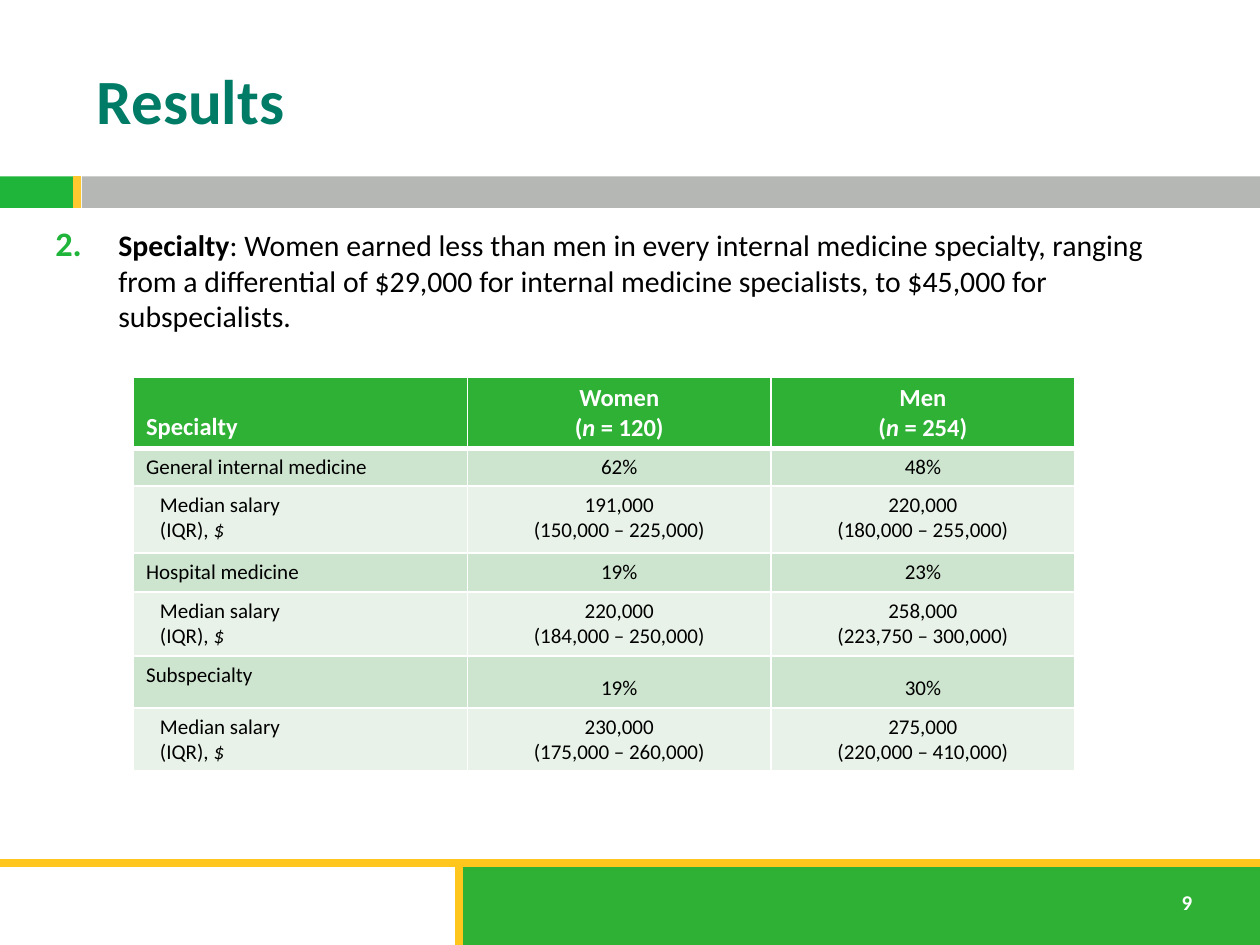
"""Build the results slide comparing salaries by specialty."""
from dataclasses import dataclass

from lxml import etree
from pptx import Presentation
from pptx import util as u
from pptx.dml.color import RGBColor
from pptx.enum import shapes, text
from pptx.oxml.ns import qn

WHITE, BLACK, GREEN, TEAL = "FFFFFF", "000000", "2EB135", "007C66"
BRIGHT, GREY, GOLD, AMBER = "1EB53A", "B5B7B4", "FFC61E", "FFC82E"
SHADE, TINT = "CDE4CE", "E8F2E8"
CENTER, LEFT = text.PP_ALIGN.CENTER, text.PP_ALIGN.LEFT
TOP, MIDDLE, BOTTOM = text.MSO_ANCHOR.TOP, text.MSO_ANCHOR.MIDDLE, text.MSO_ANCHOR.BOTTOM


@dataclass
class Bar:
    x: float
    y: float
    w: float
    h: float
    color: str


@dataclass
class Rule:
    x1: float
    y1: float
    x2: float
    y2: float
    color: str


@dataclass
class Specialty:
    name: str
    shares: tuple
    medians: tuple
    ranges: tuple
    heights: tuple


BARS = [
    Bar(0, 1.4, 0.58, 0.25, BRIGHT),
    Bar(0.65, 1.4, 9.35, 0.25, GREY),
    Bar(3.62, 6.84, 6.38, 0.66, GREEN),
]
RULES = [
    Rule(0, 6.85, 10, 6.85, GOLD),
    Rule(3.64, 6.86, 3.64, 7.5, GOLD),
    Rule(0.61, 1.4, 0.61, 1.65, AMBER),
]
SPECIALTIES = [
    Specialty("General internal medicine", ("62%", "48%"), ("191,000", "220,000"),
              ("(150,000 – 225,000)", "(180,000 – 255,000)"), (0.3, 0.53)),
    Specialty("Hospital medicine", ("19%", "23%"), ("220,000", "258,000"),
              ("(184,000 – 250,000)", "(223,750 – 300,000)"), (0.31, 0.51)),
    Specialty("Subspecialty", ("19%", "30%"), ("230,000", "275,000"),
              ("(175,000 – 260,000)", "(220,000 – 410,000)"), (0.41, 0.5)),
]
COLUMNS = (2.65, 2.41, 2.41)
HEADER_HEIGHT = 0.56


def rgb(color: str) -> RGBColor:
    return RGBColor.from_string(color)


def add_run(p, words: str, size: float, color: str, **formats) -> None:
    r = p.add_run()
    r.text = words
    r.font.color.rgb = rgb(color)
    for name, value in {"name": "Calibri", "size": u.Pt(size), **formats}.items():
        setattr(r.font, name, value)


def add_bar(s, bar: Bar) -> None:
    sp = s.shapes.add_shape(shapes.MSO_SHAPE.RECTANGLE,
                            *map(u.Inches, (bar.x, bar.y, bar.w, bar.h)))
    sp.shadow.inherit = False
    sp.fill.solid()
    sp.fill.fore_color.rgb = rgb(bar.color)
    sp.line.fill.background()


def add_rule(s, rule: Rule) -> None:
    cx = s.shapes.add_connector(shapes.MSO_CONNECTOR.STRAIGHT,
                                *map(u.Inches, (rule.x1, rule.y1, rule.x2, rule.y2)))
    cx.line.color.rgb = rgb(rule.color)
    cx.line.width = u.Pt(4.5)
    etree.SubElement(cx._element.spPr, qn("a:effectLst"))


def add_box(s, x: float, y: float, w: float, h: float, anchor=TOP, wrap: bool = True):
    tf = s.shapes.add_textbox(*map(u.Inches, (x, y, w, h))).text_frame
    tf.word_wrap = wrap
    tf.vertical_anchor = anchor
    return tf.paragraphs[0]


def number_paragraph(p, start: int, color: str) -> None:
    pPr = p._p.get_or_add_pPr()
    pPr.set("marL", str(u.Inches(0.5)))
    pPr.set("indent", str(u.Inches(-0.5)))
    bu_color = etree.SubElement(pPr, qn("a:buClr"))
    etree.SubElement(bu_color, qn("a:srgbClr"), val=color)
    etree.SubElement(pPr, qn("a:buSzPct"), val="115000")
    etree.SubElement(pPr, qn("a:buFont"), typeface="+mj-lt")
    etree.SubElement(pPr, qn("a:buAutoNum"), type="arabicPeriod", startAt=str(start))


def set_borders(cell, top: float = 1, bottom: float = 1) -> None:
    tcPr = cell._tc.get_or_add_tcPr()
    for side, width in {"L": 1, "R": 1, "T": top, "B": bottom}.items():
        ln = etree.SubElement(tcPr, qn(f"a:ln{side}"), w=str(u.Pt(width)))
        fill = etree.SubElement(ln, qn("a:solidFill"))
        etree.SubElement(fill, qn("a:srgbClr"), val=WHITE)


def fill_cell(cell, lines: tuple, fill: str, align, anchor=TOP, inset: float = 0.1,
              size: float = 12, color: str = BLACK, bold: bool = False) -> None:
    """Write lines into a cell, setting text between asterisks in italics."""
    cell.fill.solid()
    cell.fill.fore_color.rgb = rgb(fill)
    cell.vertical_anchor = anchor
    cell.margin_left = u.Inches(inset)
    tf = cell.text_frame
    for i, line in enumerate(lines):
        p = tf.add_paragraph() if i else tf.paragraphs[0]
        p.alignment = align
        for j, part in enumerate(line.split("*")):
            if part:
                add_run(p, part, size, color, bold=bold, italic=j % 2 == 1)


def add_salary_table(s) -> None:
    heights = [HEADER_HEIGHT] + [h for item in SPECIALTIES for h in item.heights]
    table = s.shapes.add_table(len(heights), len(COLUMNS), u.Inches(1.06), u.Inches(2.99),
                               u.Inches(sum(COLUMNS)), u.Inches(sum(heights))).table
    for column, width in zip(table.columns, COLUMNS):
        column.width = u.Inches(width)
    for i, (row, height) in enumerate(zip(table.rows, heights)):
        row.height = u.Inches(height)
        for cell in row.cells:
            set_borders(cell, top=3 if i == 1 else 1, bottom=3 if i == 0 else 1)

    header = {"size": 14, "color": WHITE, "bold": True}
    fill_cell(table.cell(0, 0), ("Specialty",), GREEN, LEFT, BOTTOM, **header)
    for col, (group, n) in enumerate((("Women", 120), ("Men", 254)), 1):
        fill_cell(table.cell(0, col), (group, f"(*n* = {n})"), GREEN, CENTER, **header)
    for i, item in enumerate(SPECIALTIES):
        row = 1 + 2 * i
        fill_cell(table.cell(row, 0), (item.name,), SHADE, LEFT)
        fill_cell(table.cell(row + 1, 0), ("Median salary", "(IQR), *$*"), TINT, LEFT, inset=0.21)
        for col, (share, *salary) in enumerate(zip(item.shares, item.medians, item.ranges), 1):
            fill_cell(table.cell(row, col), (share,), SHADE, CENTER, BOTTOM)
            fill_cell(table.cell(row + 1, col), salary, TINT, CENTER)


def main() -> None:
    prs = Presentation()
    prs.slide_width, prs.slide_height = u.Inches(10), u.Inches(7.5)
    s = prs.slides.add_slide(prs.slide_layouts[6])
    for bar in BARS:
        add_bar(s, bar)
    for rule in RULES:
        add_rule(s, rule)
    add_run(add_box(s, 9.28, 7.01, 0.4, 0.3, wrap=False), "9", 12, WHITE, bold=True)
    add_run(add_box(s, 0.67, 0.25, 8.92, 1.08, MIDDLE), "Results", 36, TEAL, bold=True)
    add_salary_table(s)
    p = add_box(s, 0.34, 1.75, 8.92, 1.16)
    number_paragraph(p, 2, BRIGHT)
    add_run(p, "Specialty", 17, BLACK, bold=True)
    add_run(p, ": Women earned less than men in every internal medicine specialty, ranging "
               "from a differential of $29,000 for internal medicine specialists, to $45,000 "
               "for subspecialists.", 17, BLACK, bold=False)
    prs.save("out.pptx")


if __name__ == "__main__":
    main()
